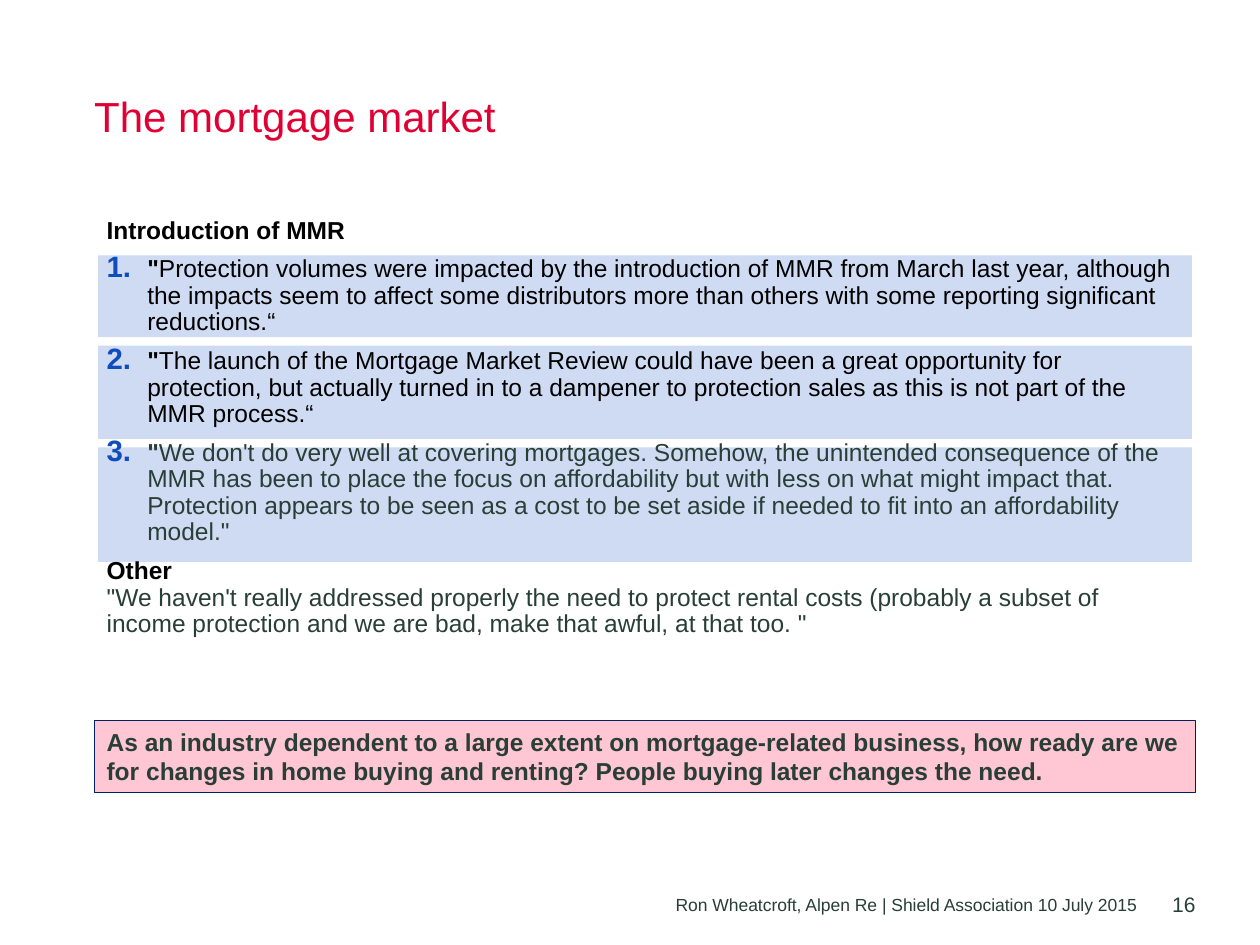
from pptx import Presentation
from pptx.dml.color import RGBColor
from pptx.enum.shapes import MSO_SHAPE
from pptx.enum.text import MSO_ANCHOR, PP_ALIGN
from pptx.util import Cm, Pt
from lxml.etree import SubElement
from pptx.oxml.ns import qn

BLACK, GREEN, BLUE = "000000", "283E36", "0F4DBC"


def style(font, size, hue, bold=None):
    font.name = "Arial"
    font.size = Pt(size)
    font.color.rgb = RGBColor.from_string(hue)
    font.bold = bold


def label(text, box, size, hue, foot=False):
    frame = slide.shapes.add_textbox(*map(Cm, box)).text_frame
    frame.word_wrap = True
    frame.margin_left = frame.margin_right = 0
    frame.margin_top = frame.margin_bottom = 0
    para = frame.paragraphs[0]
    para.text = text
    style(para.font, size, hue)
    if foot:
        frame.vertical_anchor = MSO_ANCHOR.BOTTOM
        para.alignment = PP_ALIGN.RIGHT
    else:
        para.line_spacing = 0.9


deck = Presentation()
deck.slide_width, deck.slide_height = Cm(25.4), Cm(19.05)
slide = deck.slides.add_slide(deck.slide_layouts[6])

# Title, footer and page number
label("The mortgage market", (1.9, 1.93, 22.2, 1.93), 24, "E00034")
label("Ron Wheatcroft, Alpen Re | Shield Association 10 July 2015",
      (6.5, 18.06, 16.41, 0.38), 10, GREEN, True)
label("16", (23.5, 17.98, 0.6, 0.51), 12, GREEN, True)

# Closing question
ask = slide.shapes.add_shape(
    MSO_SHAPE.RECTANGLE, Cm(1.9), Cm(14.53), Cm(22.2), Cm(1.45))
ask.shadow.inherit = False
ask.fill.solid()
ask.fill.fore_color.rgb = RGBColor.from_string("FFC6D3")
ask.line.color.rgb = RGBColor.from_string("002060")
ask.line.width = Pt(0.75)
ask.text_frame.word_wrap = True
ask.text_frame.vertical_anchor = MSO_ANCHOR.TOP
para = ask.text_frame.paragraphs[0]
para.text = (
    "As an industry dependent to a large extent on mortgage-related business, "
    "how ready are we for changes in home buying and renting? "
    "People buying later changes the need.")
para.alignment = PP_ALIGN.LEFT
style(para.font, 14, GREEN, True)

# Bands behind the quotes
top = 5.15
for height in (1.65, 1.88, 2.31):
    band = slide.shapes.add_shape(
        MSO_SHAPE.RECTANGLE, Cm(1.98), Cm(top), Cm(22.05), Cm(height))
    band.shadow.inherit = False
    band.fill.solid()
    band.fill.fore_color.rgb = RGBColor.from_string("CFDBF2")
    band.line.fill.background()
    top += height + 0.17

# Body text: numbered flag, then runs of text, colour and weight
body = [
    (False, [("Introduction of MMR", BLACK, True)]),
    (True, [('"', BLACK, True),
            ("Protection volumes were impacted by the introduction of MMR from "
             "March last year, although the impacts seem to affect some "
             "distributors more than others with some reporting significant "
             "reductions.“", BLACK, False)]),
    (True, [('"', BLACK, True),
            ("The launch of the Mortgage Market Review could have been a great "
             "opportunity for protection, but actually turned in to a dampener "
             "to protection sales as this is not part of the MMR process.“",
             BLACK, False)]),
    (True, [('"', GREEN, True),
            ("We don't do very well at covering mortgages. Somehow, the "
             "unintended consequence of the MMR has been to place the focus on "
             "affordability but with less on what might impact that. Protection "
             "appears to be seen as a cost to be set aside if needed to fit "
             'into an affordability model."', GREEN, False)]),
    (False, [("Other", BLACK, True),
             ('"We haven\'t really addressed properly the need to protect '
              "rental costs (probably a subset of income protection and we are "
              'bad, make that awful, at that too. "', GREEN, False)]),
]
frame = slide.shapes.add_textbox(
    Cm(1.9), Cm(4.27), Cm(22.12), Cm(8.99)).text_frame
frame.word_wrap = True
for i, (listed, runs) in enumerate(body):
    para = frame.add_paragraph() if i else frame.paragraphs[0]
    if listed:
        props = para._p.get_or_add_pPr()
        props.set("marL", str(Cm(0.82)))
        props.set("indent", str(-Cm(0.82)))
        tint = SubElement(props, qn("a:buClr"))
        SubElement(tint, qn("a:srgbClr"), val=BLUE)
        SubElement(props, qn("a:buSzPct"), val="120000")
        SubElement(props, qn("a:buFont"), typeface="+mj-lt")
        SubElement(props, qn("a:buAutoNum"), type="arabicPeriod")
    para.line_spacing = 0.9
    if i:
        para.space_before = Pt(7)
    for j, (text, hue, bold) in enumerate(runs):
        if j and not listed:
            para.add_line_break()
        run = para.add_run()
        run.text = text
        style(run.font, 14, hue, bold)

deck.save("out.pptx")
